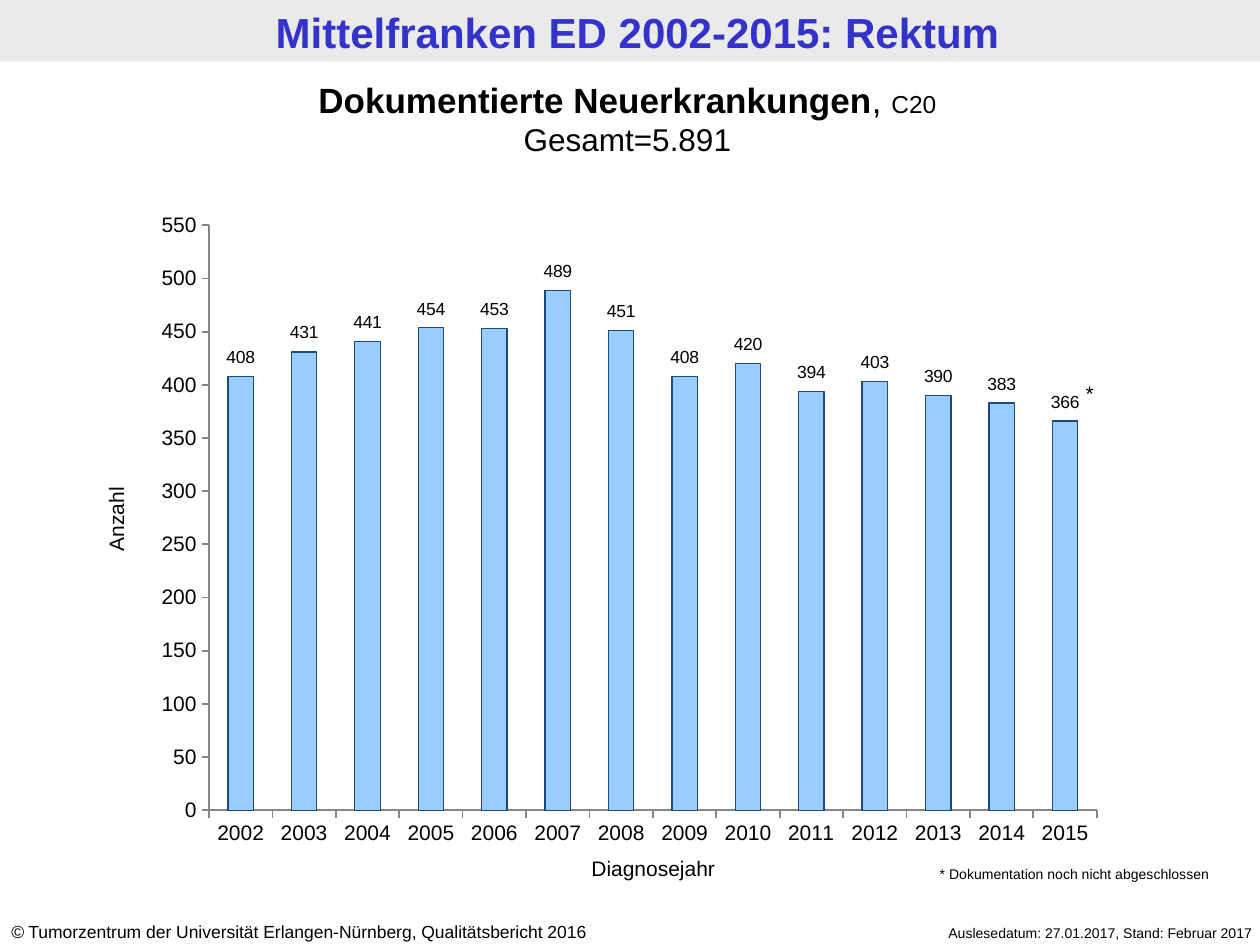
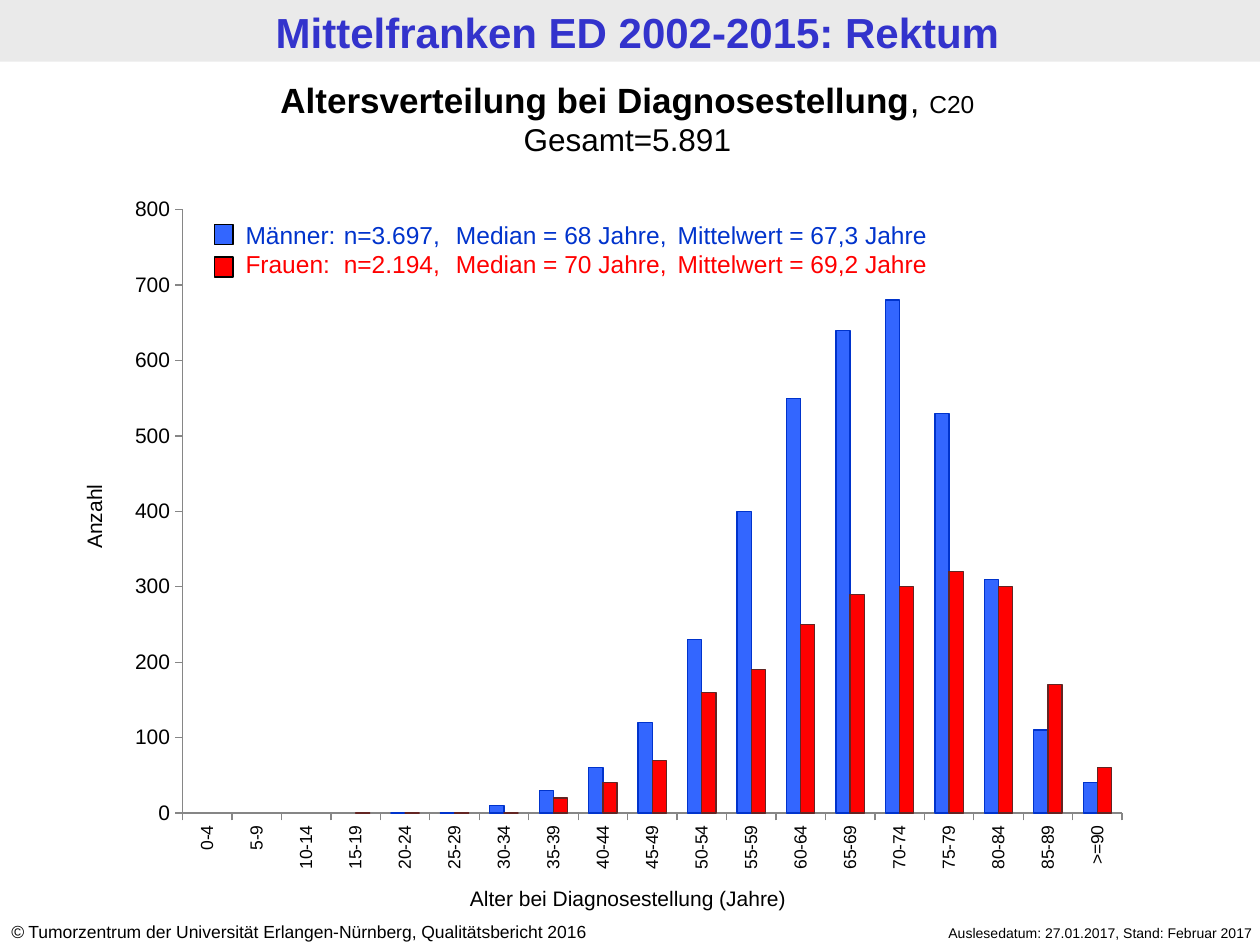
"""Build two slides on rectal cancer diagnoses in Mittelfranken, 2002-2015."""
from dataclasses import dataclass

from lxml.etree import SubElement
from pptx import Presentation
from pptx.chart.data import CategoryChartData
from pptx.dml.color import RGBColor
from pptx.enum.chart import XL_CHART_TYPE as ChartType, XL_LABEL_POSITION as LabelPosition
from pptx.enum.chart import XL_TICK_MARK as TickMark
from pptx.enum.shapes import MSO_SHAPE as Preset
from pptx.enum.text import MSO_ANCHOR as Anchor, MSO_AUTO_SIZE as AutoSize, PP_ALIGN as Align
from pptx.oxml import parse_xml
from pptx.oxml.ns import nsdecls, qn
from pptx.util import Inches, Pt


@dataclass(frozen=True)
class Theme:
    font: str = "Arial"
    chart_font: str = "Calibri"
    black: RGBColor = RGBColor(0, 0, 0)
    white: RGBColor = RGBColor(255, 255, 255)
    band: RGBColor = RGBColor.from_string("EAEAEA")
    title: RGBColor = RGBColor.from_string("3333CC")
    axis: RGBColor = RGBColor.from_string("868686")
    cases: RGBColor = RGBColor.from_string("99CCFF")
    cases_edge: RGBColor = RGBColor.from_string("1F497D")
    men: RGBColor = RGBColor.from_string("3366FF")
    men_edge: RGBColor = RGBColor.from_string("0033CC")
    women: RGBColor = RGBColor.from_string("FF0000")
    women_edge: RGBColor = RGBColor.from_string("632523")
    title_size: int = 24
    heading_size: int = 20
    total_size: int = 18
    legend_size: int = 14
    label_size: int = 12
    small_size: int = 10
    note_size: int = 8


THEME = Theme()


def write(shape, *paragraphs, size=THEME.label_size, color=THEME.black, align=Align.LEFT,
          bold=False, rotation=0, tabs=(), anchor=Anchor.TOP):
    """Fill a shape with paragraphs, each a string or a list of (text, font settings)."""
    shape.rotation = rotation
    frame = shape.text_frame
    frame.word_wrap = True
    frame.auto_size = AutoSize.NONE
    frame.vertical_anchor = anchor
    for number, content in enumerate(paragraphs):
        paragraph = frame.add_paragraph() if number else frame.paragraphs[0]
        paragraph.alignment = align
        if tabs:
            stops = SubElement(paragraph._p.get_or_add_pPr(), qn("a:tabLst"))
            for stop in tabs:
                SubElement(stops, qn("a:tab"), pos=str(Inches(stop)), algn="l")
        for text, settings in [(content, {})] if isinstance(content, str) else content:
            run = paragraph.add_run()
            run.text = text
            font = run.font
            font.name = THEME.font
            font.size = Pt(settings.get("size", size))
            font.bold = settings.get("bold", bold)
            font.italic = settings.get("italic", False)
            font.color.rgb = color


def add_columns(slide, box, kind, categories, series, top, step, plot_area, axis_width,
                category_size, font_name, font_size):
    """Add a column chart; series holds (values, fill, edge) and plot_area holds fractions."""
    data = CategoryChartData()
    data.categories = categories
    for number, (values, _, _) in enumerate(series, 1):
        data.add_series(f"Series {number}", values)
    chart = slide.shapes.add_chart(kind, *map(Inches, box), data).chart
    chart.has_legend = chart.has_title = False
    chart.font.name, chart.font.size = font_name, Pt(font_size)
    chart.font.color.rgb = THEME.black
    value_axis = chart.value_axis
    value_axis.minimum_scale, value_axis.maximum_scale = 0, top
    value_axis.major_unit = step
    value_axis.has_major_gridlines = False
    for axis, size in ((chart.category_axis, category_size), (value_axis, THEME.label_size)):
        axis.major_tick_mark, axis.minor_tick_mark = TickMark.OUTSIDE, TickMark.NONE
        axis.format.line.color.rgb = THEME.axis
        axis.format.line.width = Pt(axis_width)
        font = axis.tick_labels.font
        font.name, font.size, font.color.rgb = THEME.font, Pt(size), THEME.black
    plot = chart.plots[0]
    plot.gap_width, plot.vary_by_categories = 150, False
    for columns, (_, fill, edge) in zip(plot.series, series):
        columns.format.fill.solid()
        columns.format.fill.fore_color.rgb = fill
        columns.format.line.color.rgb = edge
        columns.format.line.width = Pt(0.75)
    plot_element = chart._chartSpace.chart.plotArea
    for layout in plot_element.findall(qn("c:layout")):
        plot_element.remove(layout)
    x, y, width, height = plot_area
    plot_element.insert(0, parse_xml(
        f'<c:layout {nsdecls("c")}><c:manualLayout><c:layoutTarget val="inner"/>'
        f'<c:xMode val="edge"/><c:yMode val="edge"/><c:x val="{x}"/><c:y val="{y}"/>'
        f'<c:w val="{width}"/><c:h val="{height}"/></c:manualLayout></c:layout>'))
    return chart


deck = Presentation()
deck.slide_width, deck.slide_height = Inches(10), Inches(7.5)
title_only = deck.slide_layouts[5]

headings = ("Dokumentierte Neuerkrankungen", "Altersverteilung bei Diagnosestellung")
slides = []
for heading in headings:
    slide = deck.slides.add_slide(title_only)
    slides.append(slide)
    shapes = slide.shapes
    band = shapes.add_shape(Preset.RECTANGLE, 0, 0, Inches(10), Inches(0.49))
    band.shadow.inherit = False
    band.fill.solid()
    band.fill.fore_color.rgb = THEME.band
    band.line.fill.background()
    shapes._spTree.insert(2, band._element)
    title = shapes.title
    title.left, title.top, title.width, title.height = map(Inches, (0.06, 0.01, 10, 0.49))
    write(title, "Mittelfranken ED 2002-2015: Rektum", size=THEME.title_size,
          color=THEME.title, align=Align.CENTER, bold=True, anchor=Anchor.MIDDLE)
    write(shapes.add_textbox(*map(Inches, (-0.01, 7.26, 5.24, 0.27))),
          [("©", {"italic": True}),
           (" Tumorzentrum der Universität Erlangen-Nürnberg, Qualitätsbericht 2016", {})],
          size=THEME.small_size)
    write(shapes.add_textbox(*map(Inches, (6.65, 7.29, 3.39, 0.24))),
          "Auslesedatum: 27.01.2017, Stand: Februar 2017",
          size=THEME.note_size, align=Align.RIGHT)
    write(shapes.add_textbox(*map(Inches, (-0.04, 0.57, 10.04, 0.74))),
          [(heading, {"bold": True}), (", ", {}), ("C20", {"size": THEME.legend_size})],
          [("Gesamt=5.891", {"size": THEME.total_size})],
          size=THEME.heading_size, align=Align.CENTER)
yearly, by_age = slides

cases = (408, 431, 441, 454, 453, 489, 451, 408, 420, 394, 403, 390, 383, 366)
most_cases, plot_height, label_gap = 550, 0.9, 0.03
cases_chart = add_columns(
    yearly, (1.15, 1.64, 7.71, 5.14), ChartType.COLUMN_STACKED,
    [str(year) for year in range(2002, 2016)], [(cases, THEME.cases, THEME.cases_edge)],
    top=most_cases, step=50, plot_area=(0.066, 0.029, 0.914, 0.903), axis_width=1,
    category_size=THEME.label_size, font_name=THEME.font, font_size=THEME.label_size)
cases_chart.plots[0].overlap = 100
yearly_columns = cases_chart.plots[0].series[0]
for number in range(len(cases)):
    case_label = yearly_columns.points[number].data_label
    case_label.position = LabelPosition.CENTER
    case_label.font.size, case_label.font.name = Pt(THEME.small_size), THEME.font
    case_label.font.color.rgb = THEME.black
case_labels = yearly_columns._element.find(qn("c:dLbls"))
for leader_setting in case_labels.findall(qn("c:showLeaderLines")):
    case_labels.remove(leader_setting)
SubElement(case_labels, qn("c:showLeaderLines"), val="0")
for label_element, count in zip(case_labels.findall(qn("c:dLbl")), cases):
    rise = count / most_cases * plot_height / 2 + label_gap
    label_element.insert(1, parse_xml(
        f'<c:layout {nsdecls("c")}><c:manualLayout><c:x val="0"/>'
        f'<c:y val="{-rise:.3f}"/></c:manualLayout></c:layout>'))

ages = [f"{start}-{start + 4}" for start in range(0, 90, 5)] + [">=90"]
men = (None, None, None, None, 0, 0, 10, 30, 60, 120, 230, 400, 550, 640, 680, 530, 310, 110, 40)
women = (None, None, None, 0, 0, 0, 0, 20, 40, 70, 160, 190, 250, 290, 300, 320, 300, 170, 60)
age_chart = add_columns(
    by_age, (0.91, 1.47, 8.16, 5.55), ChartType.COLUMN_CLUSTERED, ages,
    [(men, THEME.men, THEME.men_edge), (women, THEME.women, THEME.women_edge)],
    top=800, step=100, plot_area=(0.066, 0.035, 0.914, 0.863), axis_width=0.75,
    category_size=THEME.small_size, font_name=THEME.chart_font, font_size=THEME.total_size)
age_chart.plots[0].overlap = 0
age_chart.category_axis._element.xpath("c:txPr/a:bodyPr")[0].set("rot", "-5400000")
age_chart._chartSpace.chart.plotArea.append(parse_xml(
    f'<c:spPr {nsdecls("c", "a")}><a:solidFill><a:srgbClr val="{THEME.white}"/>'
    '</a:solidFill></c:spPr>'))

for slide, box, text, rotation in (
        (yearly, (4.06, 6.74, 2.25, 0.3), "Diagnosejahr", 0),
        (yearly, (0.31, 3.97, 1.22, 0.3), "Anzahl", 270),
        (by_age, (3.45, 6.98, 3.07, 0.3), "Alter bei Diagnosestellung (Jahre)", 0),
        (by_age, (-0.56, 3.95, 2.61, 0.3), "Anzahl", 270)):
    write(slide.shapes.add_textbox(*map(Inches, box)), text, align=Align.CENTER,
          rotation=rotation)

write(yearly.shapes.add_textbox(*map(Inches, (8.39, 2.97, 0.39, 0.3))), "*", align=Align.RIGHT)
write(yearly.shapes.add_textbox(*map(Inches, (7.36, 6.82, 2.52, 0.24))),
      "* Dokumentation noch nicht abgeschlossen", size=THEME.note_size)

legend_rows = (
    ("Männer: \tn=3.697, \tMedian = 68 Jahre, \tMittelwert = 67,3 Jahre",
     THEME.men_edge, THEME.men, 1.7, 1.78),
    ("Frauen: \tn=2.194, \tMedian = 70 Jahre,\tMittelwert = 69,2 Jahre",
     THEME.women, THEME.women, 1.93, 2.04))
for summary, text_color, key_color, text_top, key_top in legend_rows:
    write(by_age.shapes.add_textbox(*map(Inches, (1.85, text_top, 6.85, 0.34))), summary,
          size=THEME.legend_size, color=text_color, tabs=(0.78, 0.88, 1.67, 3.43))
    key = by_age.shapes.add_shape(Preset.RECTANGLE, *map(Inches, (1.7, key_top, 0.15, 0.16)))
    key.shadow.inherit = False
    key.fill.solid()
    key.fill.fore_color.rgb = key_color
    key.line.color.rgb = THEME.black
    key.line.width = Pt(0.75)

deck.save("out.pptx")
